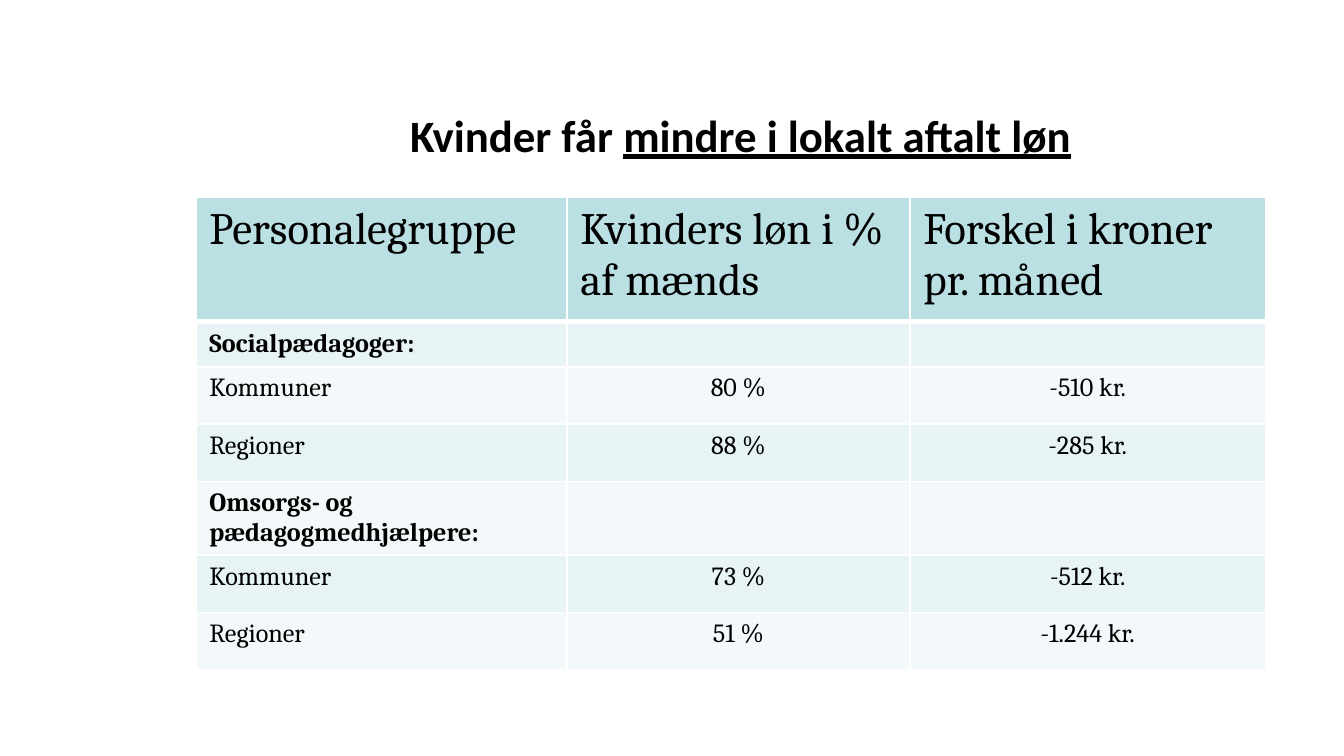
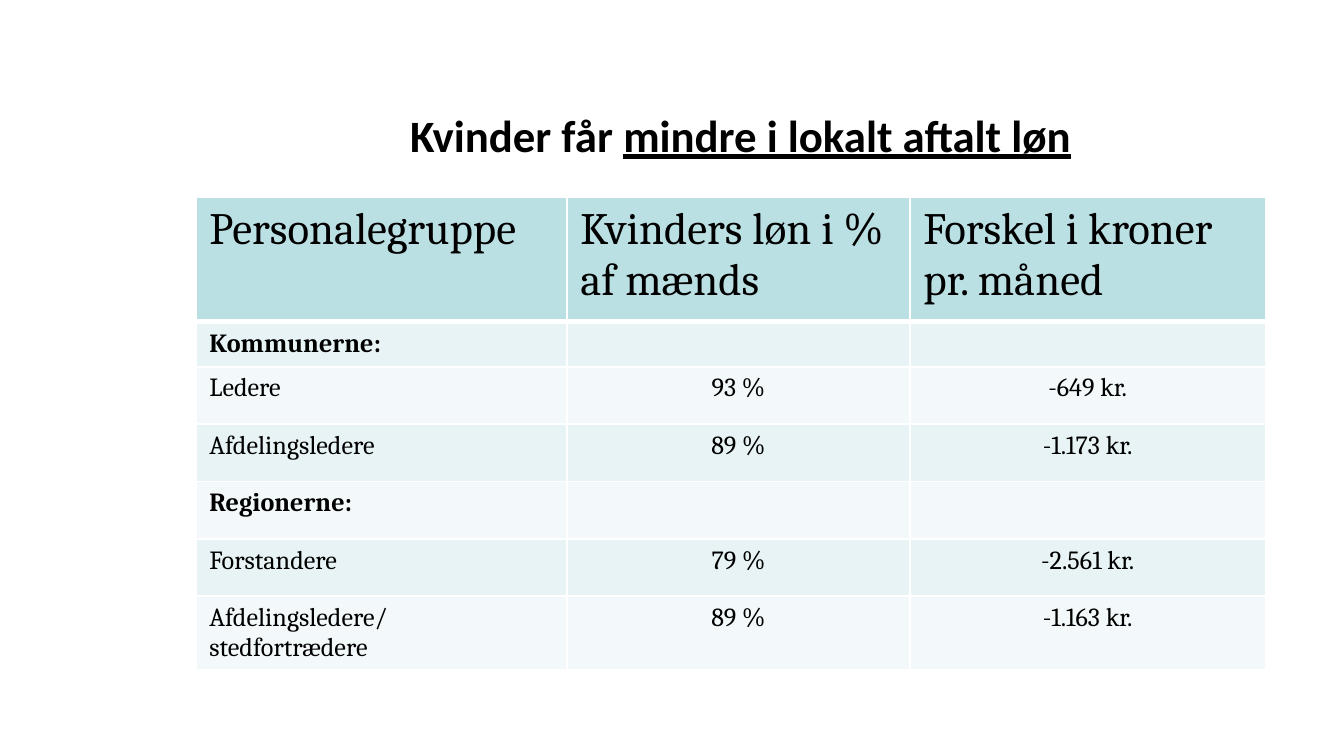
from lxml.etree import SubElement
from pptx import Presentation
from pptx.dml.color import RGBColor
from pptx.enum.text import MSO_ANCHOR, MSO_AUTO_SIZE, PP_ALIGN
from pptx.oxml import parse_xml
from pptx.oxml.ns import nsdecls, qn
from pptx.util import Emu, Pt

EMU_PER_PX = 9525
BLACK, WHITE = "000000", "FFFFFF"
HEADER_FILL = "BBE0E3"
BAND_FILLS = ("F3F9FA", "E7F3F4")
TITLE_FONT, TABLE_FONT = "Calibri", "Cambria"
LARGE_SIZE, BODY_SIZE = 24, 14

COLUMN_WIDTHS = (265, 245, 254)
ROW_HEIGHTS = (89, 32, 41, 41, 41, 41, 41)
HEADER_BORDERS = {"lnL": 1, "lnR": 1, "lnT": 1, "lnB": 3}
TITLE_SPANS = (("Kvinder får ", False), ("mindre i lokalt aftalt løn", True))
HEADINGS = ("Personalegruppe", "Kvinders løn i % af mænds", "Forskel i kroner pr. måned")

STAFF_ROWS = (
    ("Socialpædagoger:", "", ""),
    ("Kommuner", "80 %", "-510 kr."),
    ("Regioner", "88 %", "-285 kr."),
    ("Omsorgs- og pædagogmedhjælpere:", "", ""),
    ("Kommuner", "73 %", "-512 kr."),
    ("Regioner", "51 %", "-1.244 kr."),
)
LEADER_ROWS = (
    ("Kommunerne:", "", ""),
    ("Ledere", "93 %", "-649 kr."),
    ("Afdelingsledere", "89 %", "-1.173 kr."),
    ("Regionerne:", "", ""),
    ("Forstandere", "79 %", "-2.561 kr."),
    ("Afdelingsledere/\nstedfortrædere", "89 %", "-1.163 kr."),
)


def px(length):
    """Turn whole px into EMU."""
    return Emu(length * EMU_PER_PX)


def color(value):
    """Turn a hex string into a colour."""
    return RGBColor.from_string(value)


def set_font(font, name, size, bold):
    """Set the family, size, weight and black colour of a font."""
    font.name = name
    font.size = Pt(size)
    font.bold = bold
    font.color.rgb = color(BLACK)


def add_title(page):
    """Fill the title placeholder with its partly underlined heading."""
    title = page.shapes.title
    title.left, title.top, title.width, title.height = px(151), px(59), px(756), px(84)
    frame = title.text_frame
    frame.margin_left = frame.margin_top = frame.margin_right = frame.margin_bottom = 0
    frame.auto_size = MSO_AUTO_SIZE.NONE
    frame.vertical_anchor = MSO_ANCHOR.TOP
    para = frame.paragraphs[0]
    para.alignment = PP_ALIGN.CENTER
    para.line_spacing = Pt(42)
    set_font(para.font, TITLE_FONT, LARGE_SIZE, True)
    for text, underlined in TITLE_SPANS:
        span = para.add_run()
        span.text = text
        if underlined:
            span.font.underline = True


def set_header_borders(cell):
    """Draw the white borders of a header cell."""
    properties = cell._tc.get_or_add_tcPr()
    for position, (side, width) in enumerate(HEADER_BORDERS.items()):
        line = parse_xml(
            f'<a:{side} {nsdecls("a")} w="{Pt(width)}"><a:solidFill>'
            f'<a:srgbClr val="{WHITE}"/></a:solidFill></a:{side}>'
        )
        properties.insert(position, line)


def fill_cell(cell, text, fill, size, bold, alignment):
    """Write and format one table cell."""
    cell.text = text
    cell.fill.solid()
    cell.fill.fore_color.rgb = color(fill)
    for para in cell.text_frame.paragraphs:
        para.alignment = alignment
        set_font(para.font, TABLE_FONT, size, bold)
        if not text:
            SubElement(para._p, qn("a:endParaRPr"), sz=str(size * 100))


def add_pay_table(page, body_rows):
    """Add the pay table with a header, group rows and value rows."""
    frame = page.shapes.add_table(
        len(body_rows) + 1, len(HEADINGS), px(140), px(141),
        px(sum(COLUMN_WIDTHS)), px(sum(ROW_HEIGHTS)),
    )
    table = frame.table
    table.first_row = False
    for column, width in zip(table.columns, COLUMN_WIDTHS):
        column.width = px(width)
    for row, height in zip(table.rows, ROW_HEIGHTS):
        row.height = px(height)
    for index, text in enumerate(HEADINGS):
        cell = table.cell(0, index)
        fill_cell(cell, text, HEADER_FILL, LARGE_SIZE, False, PP_ALIGN.LEFT)
        set_header_borders(cell)
    for row_index, texts in enumerate(body_rows, 1):
        is_group = not any(texts[1:])
        for index, text in enumerate(texts):
            alignment = PP_ALIGN.CENTER if index else PP_ALIGN.LEFT
            fill_cell(table.cell(row_index, index), text, BAND_FILLS[row_index % 2],
                      BODY_SIZE, is_group, alignment)


def add_page(deck, body_rows):
    """Add a page with the shared title and one pay table."""
    page = deck.slides.add_slide(deck.slide_layouts[0])
    subtitle = page.placeholders[1].element
    subtitle.getparent().remove(subtitle)
    add_title(page)
    add_pay_table(page, body_rows)


def main():
    """Build and save the deck."""
    deck = Presentation()
    deck.slide_width, deck.slide_height = px(960), px(540)
    for body_rows in (STAFF_ROWS, LEADER_ROWS):
        add_page(deck, body_rows)
    deck.save("out.pptx")


if __name__ == "__main__":
    main()
